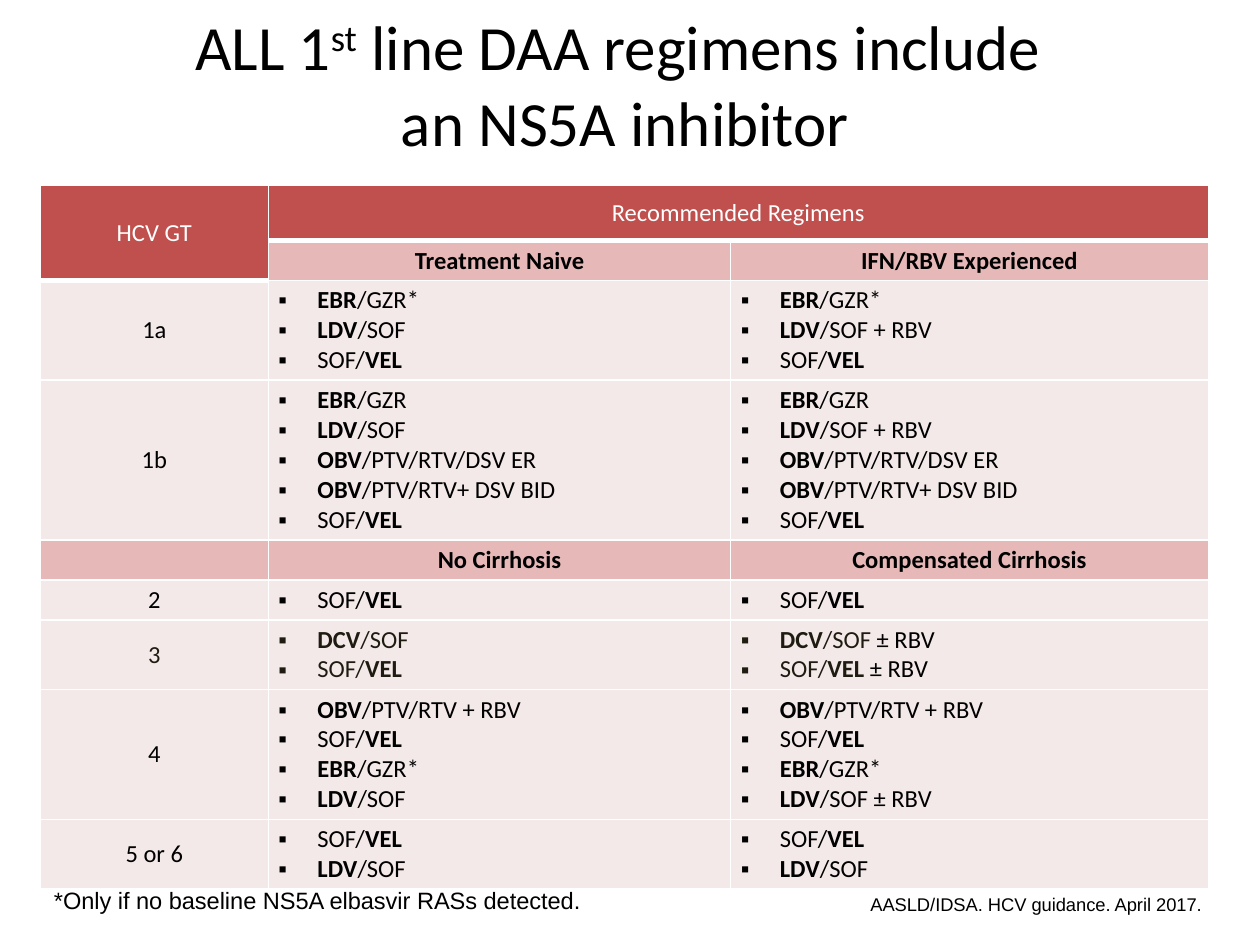
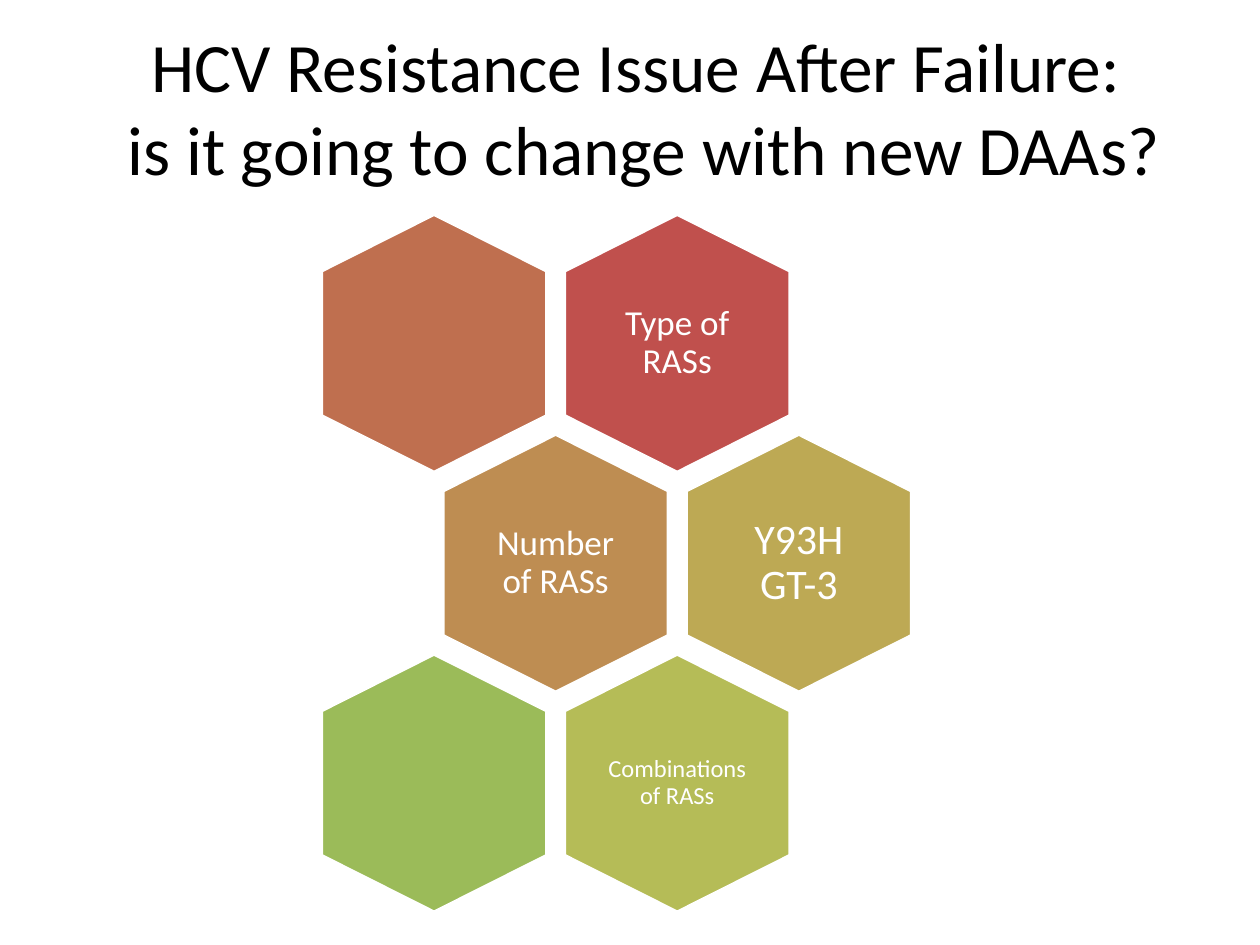
import pptx
import pptx.util
import pptx.dml.color
import pptx.enum.text
import pptx.oxml.ns
import lxml.etree
from dataclasses import dataclass

Inches, Pt = pptx.util.Inches, pptx.util.Pt
RGB = pptx.dml.color.RGBColor.from_string
qn = pptx.oxml.ns.qn
ALIGN = pptx.enum.text.PP_ALIGN
ANCHOR = pptx.enum.text.MSO_ANCHOR


@dataclass(frozen=True)
class Theme:
    font: str = "Calibri"
    note_font: str = "Arial"
    ink: str = "000000"
    soft_ink: str = "1E1C11"
    white: str = "FFFFFF"
    header: str = "C0504D"
    subheader: str = "E6B9B8"
    body: str = "F4E9E9"
    table_size: float = 14
    note_size: float = 13.5
    source_size: float = 10.5


theme = Theme()


def put_text(frame, paragraphs, size, font=theme.font, color=theme.ink, bold=False,
             align=ALIGN.LEFT, anchor=ANCHOR.MIDDLE, spacing=None, bullet=None):
    """Fill a frame; |bars| switch bold, and a paragraph may list (text, format) parts."""
    frame.word_wrap = True
    frame.vertical_anchor = anchor
    for index, content in enumerate(paragraphs):
        para = frame.paragraphs[0] if index == 0 else frame.add_paragraph()
        para.alignment = align
        if spacing:
            para.line_spacing = spacing
        if bullet:
            props = para._p.get_or_add_pPr()
            props.set("marL", str(Inches(0.31)))
            props.set("indent", str(-Inches(0.31)))
            lxml.etree.SubElement(props, qn("a:buFont"), typeface=theme.note_font)
            lxml.etree.SubElement(props, qn("a:buChar"), char=bullet)
        if not content:
            lxml.etree.SubElement(para._p, qn("a:endParaRPr"), sz=str(int(size * 100)))
            continue
        for text, own in [(content, {})] if isinstance(content, str) else content:
            for part, stretch in enumerate(text.split("|")):
                for row, line in enumerate(stretch.split("\n")):
                    if row:
                        para.add_line_break()
                    if not line:
                        continue
                    run = para.add_run()
                    run.text = line
                    run.font.name = font
                    run.font.size = Pt(size)
                    run.font.bold = bold or part % 2 == 1
                    run.font.color.rgb = RGB(own.get("color", color))
                    if "baseline" in own:
                        run._r.get_or_add_rPr().set("baseline", str(own["baseline"]))


def add_titled_slide(title, box, size):
    slide = deck.slides.add_slide(deck.slide_layouts[5])
    heading = slide.shapes.title
    heading.left, heading.top, heading.width, heading.height = map(Inches, box)
    heading.text_frame.auto_size = pptx.enum.text.MSO_AUTO_SIZE.NONE
    put_text(heading.text_frame, [title], size, align=ALIGN.CENTER)
    return slide


deck = pptx.Presentation()
deck.slide_width, deck.slide_height = Inches(10), Inches(7.5)

# Slide 1: regimens by genotype
regimen_slide = add_titled_slide(
    [("ALL 1", {}), ("st", {"baseline": 30000}),
     (" line DAA regimens include \nan NS5A inhibitor", {})],
    (0.5, 0.21, 8.92, 0.9), 36)

ebr, ebr_star = "|EBR|/GZR", "|EBR|/GZR*"
ldv, vel = "|LDV|/SOF", "SOF/|VEL|"
obv_rbv = "|OBV|/PTV/RTV + RBV"
obv_dsv = ["|OBV|/PTV/RTV/DSV ER", "|OBV|/PTV/RTV+ DSV BID"]
plus_minus = ("± RBV", {"color": theme.ink})

# Each row: kind, genotype, left cell, right cell
regimen_rows = [
    ("header", "HCV GT", ["Recommended Regimens"], [""]),
    ("subheader", "", ["Treatment Naive"], ["IFN/RBV Experienced"]),
    ("body", "1a", [ebr_star, ldv, vel], [ebr_star, ldv + " + RBV", vel]),
    ("body", "1b", [ebr, ldv, *obv_dsv, vel], [ebr, ldv + " + RBV", *obv_dsv, vel]),
    ("subheader", "", ["No Cirrhosis"], ["Compensated Cirrhosis"]),
    ("body", "2", [vel], [vel]),
    ("body", "3", ["|DCV|/SOF", vel],
     [[("|DCV|/SOF ", {}), plus_minus], [("SOF/|VEL |", {}), plus_minus]]),
    ("body", "4", [obv_rbv, vel, ebr_star, ldv], [obv_rbv, vel, ebr_star, ldv + " ± RBV"]),
    ("body", "5 or 6", [vel, ldv], [vel, ldv]),
]
regimens = regimen_slide.shapes.add_table(
    len(regimen_rows), 3, Inches(0.32), Inches(1.47), Inches(9.27), Inches(5.47)).table
regimens.first_row = regimens.horz_banding = False
for column, width in zip(regimens.columns, (1.81, 3.67, 3.79)):
    column.width = Inches(width)

for r, (kind, genotype, left, right) in enumerate(regimen_rows):
    regimens.rows[r].height = Inches(0.44 if r == 0 else 0.07 + 0.24 * len(left))
    for c, lines in enumerate(([genotype], left, right)):
        cell = regimens.cell(r, c)
        cell.margin_left = cell.margin_right = Inches(0.08)
        cell.margin_top = cell.margin_bottom = Inches(0.04)
        cell.vertical_anchor = ANCHOR.MIDDLE
        listed = kind == "body" and c > 0
        put_text(cell.text_frame, lines, theme.table_size,
                 color=(theme.white if kind == "header"
                        else theme.soft_ink if genotype == "3" else theme.ink),
                 bold=kind == "subheader",
                 align=ALIGN.LEFT if listed else ALIGN.CENTER,
                 bullet="▪" if listed else None)
        # Cell borders come before the fill in the cell properties
        cell_props = cell._tc.get_or_add_tcPr()
        for side in "LRTB":
            weight = 3 if kind == "header" and side == "B" else 1
            edge = lxml.etree.SubElement(cell_props, qn("a:ln" + side), w=str(Pt(weight)))
            paint = lxml.etree.SubElement(edge, qn("a:solidFill"))
            lxml.etree.SubElement(paint, qn("a:srgbClr"), val=theme.white)
        cell.fill.solid()
        cell.fill.fore_color.rgb = RGB(getattr(theme, kind))

regimens.cell(0, 0).merge(regimens.cell(1, 0))
regimens.cell(0, 1).merge(regimens.cell(0, 2))

# Footnote and source
for text, box, size, anchor in [
    ("*Only if no baseline NS5A elbasvir RASs detected.",
     (0.33, 6.98, 6.1, 0.33), theme.note_size, ANCHOR.TOP),
    ("AASLD/IDSA. HCV guidance. April 2017.",
     (6.81, 7.03, 3.1, 0.28), theme.source_size, ANCHOR.BOTTOM),
]:
    note = regimen_slide.shapes.add_textbox(*map(Inches, box))
    put_text(note.text_frame, [text], size, font=theme.note_font, anchor=anchor)

# Slide 2: honeycomb of resistance issues
resistance_slide = add_titled_slide(
    "HCV Resistance Issue After Failure: \nis it going to change with new DAAs?",
    (0.61, 0.22, 9, 1.25), 39.6)

hex_width, hex_height, shoulder = 1.79, 2.05, 0.45
column_pitch, row_pitch = 1.93, 1.745
# Each hexagon: row, column, colour, lines, text size
for row, column, color, lines, size in [
    (0, 1, "C0504D", ["Type of RASs"], 20),
    (0, 0, "BF6F4F", [], 20),
    (1, 0, "BE8D52", ["Number of RASs"], 20),
    (1, 1, "BDA954", ["Y93H", "GT-3"], 24),
    (2, 1, "B5BC57", ["Combinations of RASs"], 14),
    (2, 0, "9BBB59", [], 14),
]:
    x = 2.55 + column_pitch * (column + row % 2 / 2)
    y = 1.7 + row_pitch * row
    middle, right, bottom = x + hex_width / 2, x + hex_width, y + hex_height
    corners = [(middle, y), (right, y + shoulder), (right, bottom - shoulder),
               (middle, bottom), (x, bottom - shoulder), (x, y + shoulder)]
    points = [(Inches(px), Inches(py)) for px, py in corners]
    outline = resistance_slide.shapes.build_freeform(*points[0])
    outline.add_line_segments(points[1:], close=True)
    hexagon = outline.convert_to_shape()
    hexagon.shadow.inherit = False
    hexagon.fill.solid()
    hexagon.fill.fore_color.rgb = RGB(color)
    hexagon.line.color.rgb = RGB(theme.white)
    hexagon.line.width = Pt(2)
    frame = hexagon.text_frame
    frame.margin_left = frame.margin_right = Inches(0.34)
    frame.margin_top = frame.margin_bottom = Inches(0.38)
    put_text(frame, lines, size, color=theme.white, align=ALIGN.CENTER, spacing=0.9)

deck.save("out.pptx")
